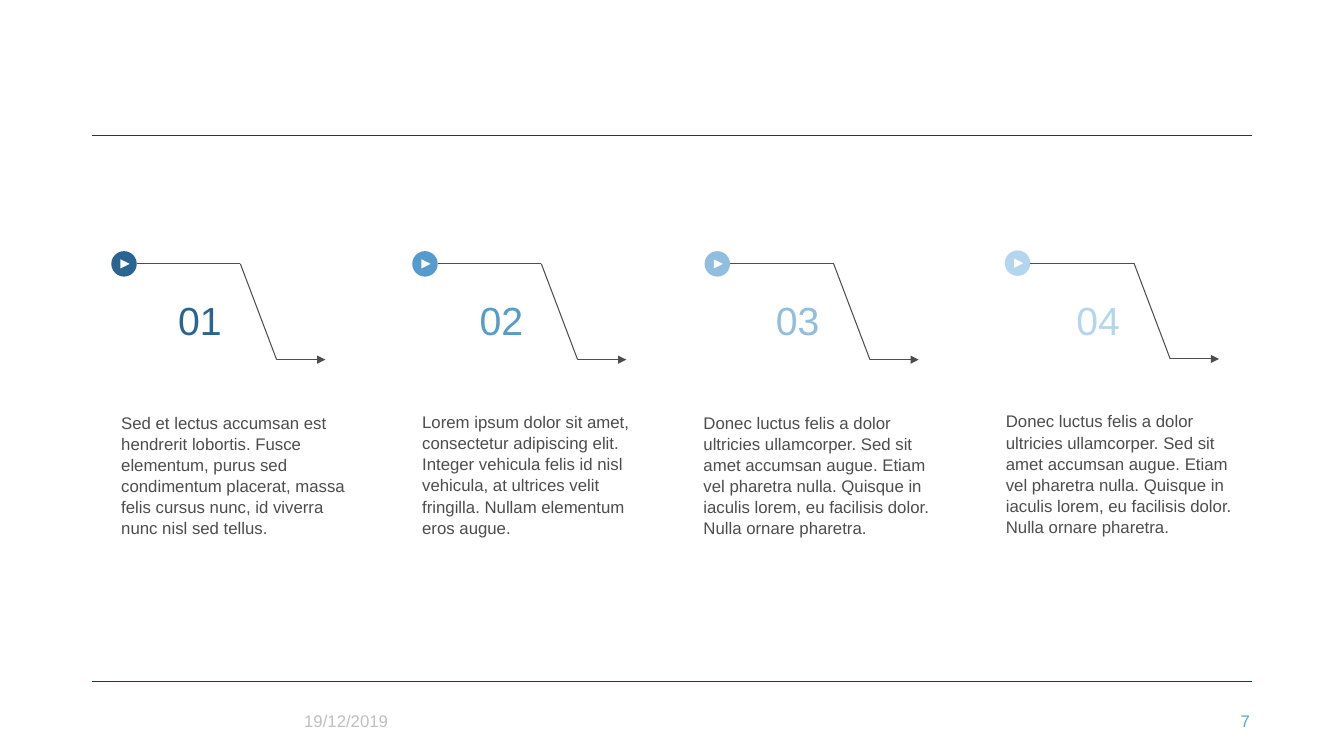
"""Build a four-step process slide with bent arrows, numbers and descriptions."""
from dataclasses import dataclass

from lxml import etree
from pptx import Presentation
from pptx.dml.color import RGBColor
from pptx.enum.shapes import MSO_CONNECTOR, MSO_SHAPE
from pptx.enum.text import MSO_ANCHOR, PP_ALIGN
from pptx.oxml.ns import qn
from pptx.slide import Slide
from pptx.util import Pt

STRAIGHT = MSO_CONNECTOR.STRAIGHT
CIRCLE = MSO_SHAPE.OVAL
TRIANGLE = MSO_SHAPE.ISOSCELES_TRIANGLE
TOP, MIDDLE = MSO_ANCHOR.TOP, MSO_ANCHOR.MIDDLE
LEFT, RIGHT = PP_ALIGN.LEFT, PP_ALIGN.RIGHT

FONT = "Arial"
GREY = "4D4D4D"
WHITE = "FFFFFF"
NAVY = "0C377B"
BLANK_LAYOUT = 6

MARKER = 18.2
PLAY = 6.5
ARROWHEAD = 5.8
BEND_X, FOOT_X, TIP_X = 92.2, 118.1, 147.6
DROP = 68.4
NUMBER_TOP = 206.6


@dataclass(frozen=True)
class Step:
    number: str
    color: str
    left: float
    axis: float
    number_left: float
    body_left: float
    body_top: float
    body: str


DONEC = (
    "Donec luctus felis a dolor ultricies ullamcorper. Sed sit amet accumsan "
    "augue. Etiam vel pharetra nulla. Quisque in iaculis lorem, eu facilisis "
    "dolor. Nulla ornare pharetra."
)
STEPS = (
    Step("01", "2A6592", 79.5, 188.5, 120.2, 79.5, 290.2,
         "Sed et lectus accumsan est hendrerit lobortis. Fusce elementum, purus "
         "sed condimentum placerat, massa felis cursus nunc, id viverra nunc "
         "nisl sed tellus."),
    Step("02", "569BCE", 294.5, 188.5, 335.5, 294.5, 289.8,
         "Lorem ipsum dolor sit amet, consectetur adipiscing elit. Integer "
         "vehicula felis id nisl vehicula, at ultrices velit fringilla. Nullam "
         "elementum eros augue."),
    Step("03", "91BEDF", 503.3, 188.5, 547.2, 495.4, 290.2, DONEC),
    Step("04", "B4D5EE", 717.8, 188, 761.8, 711.4, 289.4, DONEC),
)


def rgb(color: str) -> RGBColor:
    return RGBColor.from_string(color)


def add_line(slide: Slide, start: tuple[float, float], end: tuple[float, float],
             color: str, width: float) -> None:
    line = slide.shapes.add_connector(
        STRAIGHT, Pt(start[0]), Pt(start[1]), Pt(end[0]), Pt(end[1]))
    line.line.color.rgb = rgb(color)
    line.line.width = Pt(width)
    etree.SubElement(line._element.spPr, qn("a:effectLst"))


def add_mark(slide: Slide, preset: MSO_SHAPE, center: tuple[float, float],
             size: float, color: str, rotation: float = 0) -> None:
    mark = slide.shapes.add_shape(
        preset, Pt(center[0] - size / 2), Pt(center[1] - size / 2),
        Pt(size), Pt(size))
    mark.rotation = rotation
    mark.shadow.inherit = False
    mark.fill.solid()
    mark.fill.fore_color.rgb = rgb(color)
    mark.line.fill.background()


def add_text(slide: Slide, box: tuple[float, float, float, float], text: str,
             size: float, color: str, align: PP_ALIGN = LEFT,
             anchor: MSO_ANCHOR = TOP, spacing: float = 1.0) -> None:
    frame = slide.shapes.add_textbox(*(Pt(length) for length in box)).text_frame
    frame.word_wrap = True
    frame.vertical_anchor = anchor
    paragraph = frame.paragraphs[0]
    paragraph.alignment = align
    paragraph.line_spacing = spacing
    run = paragraph.add_run()
    run.text = text
    run.font.name = FONT
    run.font.size = Pt(size)
    run.font.color.rgb = rgb(color)


def add_step(slide: Slide, step: Step) -> None:
    middle = step.left + MARKER / 2
    foot = step.axis + DROP
    route = (
        (step.left + MARKER, step.axis),
        (step.left + BEND_X, step.axis),
        (step.left + FOOT_X, foot),
        (step.left + TIP_X, foot),
    )
    add_mark(slide, CIRCLE, (middle, step.axis), MARKER, step.color)
    for start, end in zip(route, route[1:]):
        add_line(slide, start, end, GREY, 0.75)
    add_mark(slide, TRIANGLE, (step.left + TIP_X + ARROWHEAD / 2 - 0.5, foot),
             ARROWHEAD, GREY, 90)
    add_mark(slide, TRIANGLE, (middle + 0.7, step.axis), PLAY, WHITE, 90)
    add_text(slide, (step.number_left, NUMBER_TOP, 88.6, 65.5), step.number,
             28, step.color, spacing=1.05)
    add_text(slide, (step.body_left, step.body_top, 184.3, 94.3), step.body,
             12, GREY, spacing=1.05)


def main() -> None:
    deck = Presentation()
    deck.slide_width, deck.slide_height = Pt(960), Pt(540)
    slide = deck.slides.add_slide(deck.slide_layouts[BLANK_LAYOUT])
    for rule_y in (486.5, 96.5):
        add_line(slide, (66, rule_y), (894, rule_y), NAVY, 0.5)
    add_text(slide, (210.2, 500.5, 86.4, 28.8), "19/12/2019", 12, "BFBFBF",
             anchor=MIDDLE)
    add_text(slide, (847.4, 500.5, 52.6, 28.8), "7", 12, "5AA3D9", RIGHT, MIDDLE)
    for step in STEPS:
        add_step(slide, step)
    deck.save("out.pptx")


if __name__ == "__main__":
    main()
